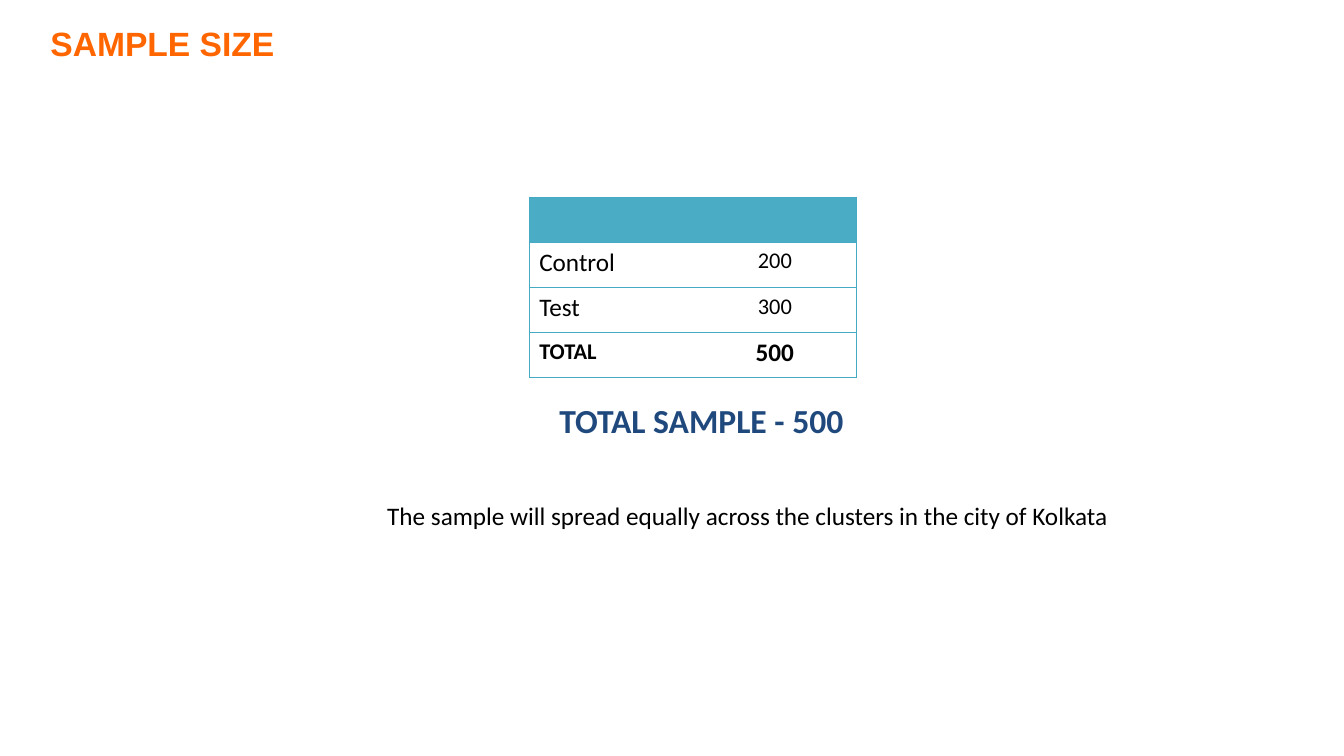
from lxml.etree import SubElement
from pptx import Presentation
from pptx.dml.color import RGBColor
from pptx.enum.text import MSO_ANCHOR as Anchor, MSO_AUTO_SIZE as AutoSize, PP_ALIGN as Align
from pptx.oxml.ns import qn
from pptx.util import Inches, Pt

COLORS = {
    "heading": "FF6600",
    "band": "4BACC6",
    "rule": "46AAC5",
    "total": "1F497D",
    "body": "000000",
}
COLUMNS, ROWS = 160, 90


class SampleSlide:
    def __init__(self, deck):
        self.column = deck.slide_width / COLUMNS
        self.row = deck.slide_height / ROWS
        self.slide = deck.slides.add_slide(deck.slide_layouts[5])

    def place(self, left, top, width, height):
        return (round(left * self.column), round(top * self.row),
                round(width * self.column), round(height * self.row))

    def set_text(self, frame, text, size, color="body", bold=False,
                 align=Align.LEFT, face="Calibri"):
        frame.text = text
        paragraph = frame.paragraphs[0]
        paragraph.alignment = align
        font = paragraph.font
        font.name, font.size, font.bold = face, Pt(size), bold
        font.color.rgb = RGBColor.from_string(COLORS[color])

    def title(self, text, *area):
        heading = self.slide.shapes.title
        heading.left, heading.top, heading.width, heading.height = self.place(*area)
        frame = heading.text_frame
        frame.margin_left = frame.margin_right = frame.margin_bottom = 0
        frame.margin_top = Inches(0.01)
        frame.vertical_anchor = Anchor.TOP
        frame.word_wrap = True
        frame.auto_size = AutoSize.SHAPE_TO_FIT_TEXT
        self.set_text(frame, text, 24, "heading", True, face="Arial")

    def caption(self, text, size, *area, **look):
        frame = self.slide.shapes.add_textbox(*self.place(*area)).text_frame
        frame.word_wrap = True
        frame.auto_size = AutoSize.SHAPE_TO_FIT_TEXT
        self.set_text(frame, text, size, align=Align.CENTER, **look)

    def borders(self, cell, sides):
        properties = cell._tc.get_or_add_tcPr()
        for position, side in enumerate(("lnL", "lnR", "lnT", "lnB")):
            line = properties.makeelement(qn(f"a:{side}"), {"w": str(Pt(0.75))})
            properties.insert(position, line)
            if side in sides:
                fill = SubElement(line, qn("a:solidFill"))
                SubElement(fill, qn("a:srgbClr"), val=COLORS["rule"])
            else:
                SubElement(line, qn("a:noFill"))

    def table(self, records, *area):
        table = self.slide.shapes.add_table(
            len(records), len(records[0]), *self.place(*area)).table
        table.horz_banding = False
        for r, record in enumerate(records):
            for c, (text, size) in enumerate(record):
                cell = table.cell(r, c)
                self.set_text(cell.text_frame, text, size, bold=r == len(records) - 1,
                              align=Align.CENTER if c else Align.LEFT)
                if r == 0:
                    cell.fill.solid()
                    cell.fill.fore_color.rgb = RGBColor.from_string(COLORS["band"])
                else:
                    cell.fill.background()
                self.borders(cell, ("lnT", "lnB", "lnR" if c else "lnL"))


def main():
    deck = Presentation()
    deck.slide_width, deck.slide_height = Inches(13.33), Inches(7.5)
    sample = SampleSlide(deck)
    sample.title("SAMPLE SIZE", 6, 2.6, 78, 5)
    sample.table([
        [("", 18), ("", 18)],
        [("Control", 18), ("200", 16)],
        [("Test", 18), ("300", 16)],
        [("TOTAL", 16), ("500", 18)],
    ], 63, 23.5, 39, 21.5)
    sample.caption("TOTAL SAMPLE - 500", 24, 48, 47, 71, 6, color="total", bold=True)
    sample.caption("The sample will spread equally across the clusters in the city of Kolkata",
                   18, 37, 59, 104, 4.8)
    deck.save("out.pptx")


if __name__ == "__main__":
    main()
